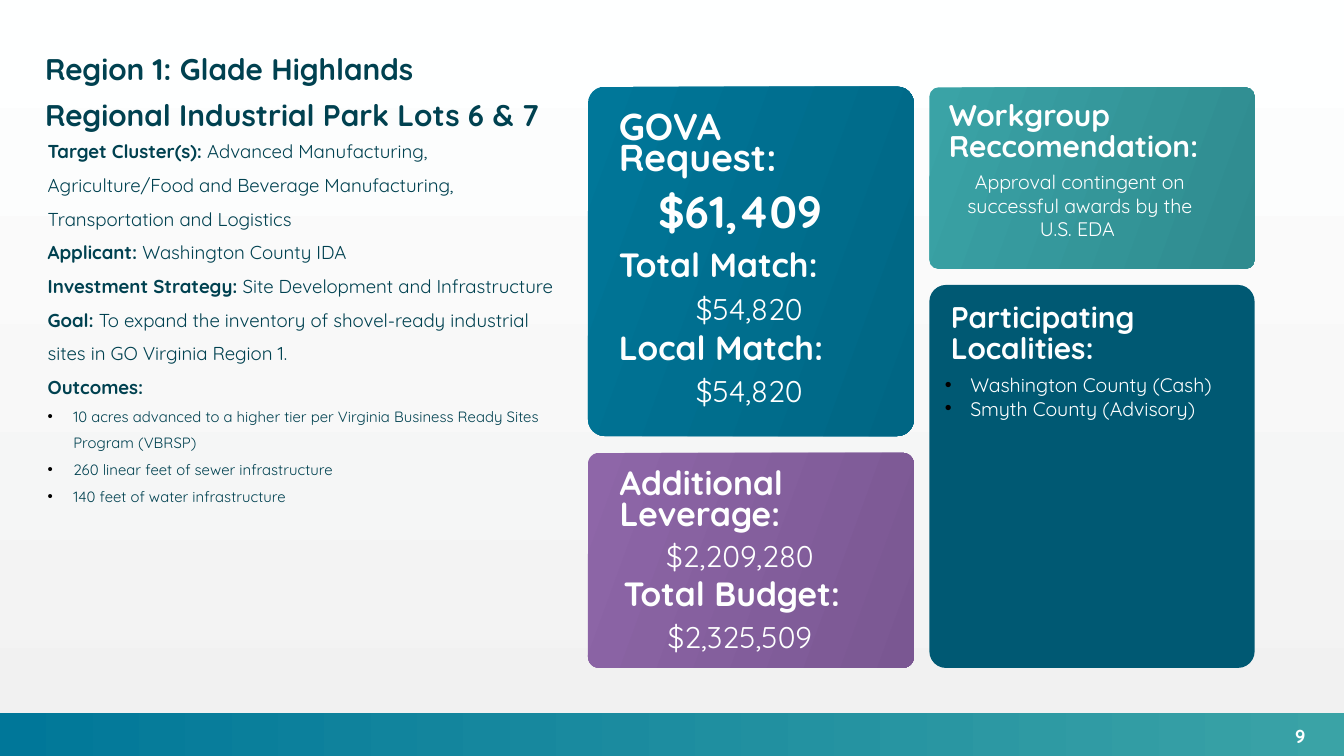
"""Build the Glade Highlands grant request slide."""
from lxml import etree
from pptx import Presentation
from pptx.dml.color import RGBColor
from pptx.enum.shapes import MSO_SHAPE
from pptx.enum.text import MSO_AUTO_SIZE, PP_ALIGN
from pptx.oxml.ns import qn
from pptx.util import Pt

RECT, ROUND = MSO_SHAPE.RECTANGLE, MSO_SHAPE.ROUNDED_RECTANGLE
LEFT, CENTER = PP_ALIGN.LEFT, PP_ALIGN.CENTER
GROW = MSO_AUTO_SIZE.SHAPE_TO_FIT_TEXT
PX = 4572
WIDTH, HEIGHT = 2000, 1125
FONT = "Quicksand"
INDENT = 38
HEADING_LEADING = Pt(16.6)
COLOURS = {
    "white": "FEFFFF", "grey": "F1F1F1", "ink": "004150", "bullet": "000000",
    "blue": "007799", "deep_blue": "006684", "navy": "005973",
    "teal": "3AA3A6", "deep_teal": "2F8B8F",
    "purple": "8E66A8", "deep_purple": "7A5792",
}


def rgb(name):
    return RGBColor.from_string(COLOURS[name])


def add_span(para, text, size=16, colour="white", bold=False):
    span = para.add_run()
    span.text = text
    span.font.name = FONT
    span.font.size = Pt(size)
    span.font.bold = bold
    span.font.color.rgb = rgb(colour)


class SlideBuilder:
    def __init__(self, page):
        self.page = page

    def paint(self, fill, colours, angle=0):
        if len(colours) == 1:
            fill.solid()
            fill.fore_color.rgb = rgb(colours[0])
            return
        fill.gradient()
        fill.gradient_angle = -angle % 360
        for stop, colour in zip(fill.gradient_stops, colours):
            stop.color.rgb = rgb(colour)

    def panel(self, place, *colours, kind=ROUND, angle=20):
        shape = self.page.shapes.add_shape(kind, *(value * PX for value in place))
        shape.shadow.inherit = False
        shape.line.fill.background()
        self.paint(shape.fill, colours, angle)
        if kind == ROUND:
            shape.adjustments[0] = 0.051

    def box(self, *place):
        frame = self.page.shapes.add_textbox(*(value * PX for value in place)).text_frame
        frame.margin_left = frame.margin_right = frame.margin_top = frame.margin_bottom = 0
        frame.word_wrap = True
        frame.auto_size = GROW
        return frame

    def paragraph(self, frame, text, label="", align=LEFT, leading=None, bullet=False, **style):
        first = frame.paragraphs[0]
        para = frame.add_paragraph() if first.runs else first
        para.alignment = align
        if leading:
            para.line_spacing = leading
        if bullet:
            self.bullet(para)
        if label:
            add_span(para, label, **{**style, "bold": True})
        if text:
            add_span(para, text, **style)

    def bullet(self, para):
        props = para._p.get_or_add_pPr()
        props.set("marL", str(INDENT * PX))
        props.set("indent", str(-INDENT * PX))
        colour = etree.SubElement(props, qn("a:buClr"))
        etree.SubElement(colour, qn("a:srgbClr"), val=COLOURS["bullet"])
        etree.SubElement(props, qn("a:buFont"), typeface="Arial")
        etree.SubElement(props, qn("a:buChar"), char="•")

    def heading(self, place, text, size=18):
        self.paragraph(self.box(*place), text, size=size, bold=True, leading=HEADING_LEADING)

    def centred(self, place, text, **style):
        self.paragraph(self.box(*place), text, align=CENTER, **style)


def main():
    deck = Presentation()
    deck.slide_width, deck.slide_height = WIDTH * PX, HEIGHT * PX
    page = deck.slides.add_slide(deck.slide_layouts[6])
    slide = SlideBuilder(page)
    slide.paint(page.background.fill, ("white", "grey"), 90)

    slide.panel((0, 1061, WIDTH, 64), "blue", "teal", kind=RECT, angle=0)
    slide.centred((1892, 1078, 86, 34), "9", size=10, bold=True)

    slide.panel((1383, 130, 484, 270), "teal", "deep_teal")
    slide.panel((875, 129, 485, 520), "blue", "deep_blue")
    slide.panel((1383, 424, 484, 570), "navy")
    slide.panel((875, 674, 485, 320), "purple", "deep_purple")

    slide.heading((921, 174, 304, 96), "GOVA Request:", size=20)
    slide.heading((922, 702, 304, 96), "Additional Leverage:")
    slide.heading((921, 377, 394, 48), "Total Match:")
    slide.heading((928, 867, 394, 48), "Total Budget:")
    slide.centred((909, 274, 384, 80), "$61,409", size=24, bold=True)
    slide.centred((923, 432, 384, 54), "$54,820")

    slide.paragraph(slide.box(67, 60, 742, 140),
                    "Region 1: Glade Highlands Regional Industrial Park Lots 6 & 7",
                    leading=Pt(24.8), size=16, colour="ink", bold=True)

    summary = slide.box(71, 192, 753, 610)
    for label, text in (
        ("Target Cluster(s): ", "Advanced Manufacturing, Agriculture/Food and Beverage "
                                "Manufacturing, Transportation and Logistics"),
        ("Applicant: ", "Washington County IDA"),
        ("Investment Strategy: ", "Site Development and Infrastructure"),
        ("Goal: ", "To expand the inventory of shovel-ready industrial sites "
                   "in GO Virginia Region 1."),
        ("Outcomes:", ""),
    ):
        slide.paragraph(summary, text, label=label, leading=1.5, size=10, colour="ink")
    for outcome in (
        "10 acres advanced to a higher tier per Virginia Business Ready Sites Program (VBRSP)",
        "260 linear feet of sewer infrastructure",
        "140 feet of water infrastructure",
    ):
        slide.paragraph(summary, outcome, leading=1.5, bullet=True, size=8, colour="ink")

    slide.heading((1412, 151, 426, 96), "Workgroup Reccomendation:", size=16)
    slide.heading((921, 500, 394, 48), "Local Match:")
    slide.centred((923, 555, 384, 54), "$54,820")
    slide.centred((909, 800, 384, 54), "$2,209,280")
    slide.centred((909, 920, 384, 54), "$2,325,509")
    slide.heading((1415, 452, 394, 96), "Participating Localities:", size=16)

    localities = slide.box(1406, 555, 432, 70)
    for locality in ("Washington County (Cash)", "Smyth County (Advisory)"):
        slide.paragraph(localities, locality, bullet=True, size=10.5)

    slide.centred((1415, 253, 384, 106),
                  "Approval contingent on successful awards by the U.S. EDA ", size=10.5)

    deck.save("out.pptx")


if __name__ == "__main__":
    main()
